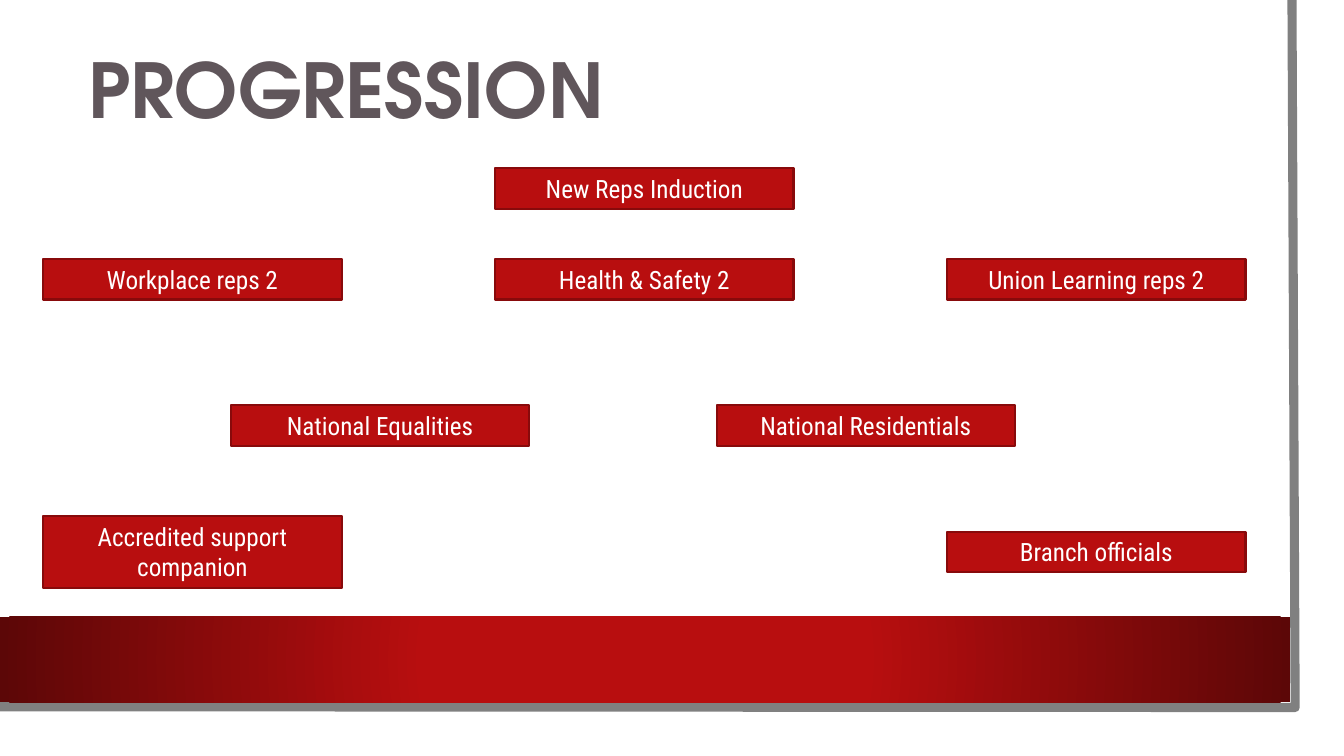
from lxml import etree
from pptx import Presentation
from pptx.dml.color import RGBColor
from pptx.enum.shapes import MSO_SHAPE
from pptx.enum.text import MSO_ANCHOR, MSO_AUTO_SIZE, PP_ALIGN
from pptx.oxml import parse_xml
from pptx.oxml.ns import nsdecls, qn
from pptx.util import Cm, Pt

# Content: column, row, lines of text, label
TITLE = "PROGRESSION"
COURSES = [
    ("centre", "induction", 1, "New Reps Induction"),
    ("right", "stage two", 1, "Union Learning reps 2"),
    ("centre", "stage two", 1, "Health & Safety 2"),
    ("left", "stage two", 1, "Workplace reps 2"),
    ("inner left", "national", 1, "National Equalities"),
    ("inner right", "national", 1, "National Residentials"),
    ("right", "roles", 1, "Branch officials"),
    ("left", "roles", 2, "Accredited support companion"),
]

RED = RGBColor(0xB8, 0x0E, 0x0F)
DARK_RED = RGBColor(0x5C, 0x07, 0x07)
OUTLINE_RED = RGBColor(0x88, 0x0A, 0x0B)
TITLE_GREY = RGBColor(0x60, 0x56, 0x5B)
FRAME_GREY = RGBColor(0x80, 0x80, 0x80)
WHITE = RGBColor(0xFF, 0xFF, 0xFF)

# Layout in centimetres: left edges of columns, centre lines of rows
COLUMN_STEP = 11.39
COLUMNS = {
    "left": 1.09,
    "centre": 1.09 + COLUMN_STEP,
    "right": 1.09 + 2 * COLUMN_STEP,
    "inner left": 5.82,
    "inner right": 18.06,
}
ROWS = {"induction": 4.75, "stage two": 7.04, "national": 10.72, "roles": 13.91}
BOX_WIDTH = 7.52
BOX_HEIGHT = 1.02
LINE_HEIGHT = 0.78


def add_rectangle(slide, left, top, width, height):
    shape = slide.shapes.add_shape(
        MSO_SHAPE.RECTANGLE, Cm(left), Cm(top), Cm(width), Cm(height))
    shape.shadow.inherit = False
    return shape


def add_run(paragraph, text, font_name, size, color, bold=False):
    run = paragraph.add_run()
    run.text = text
    run.font.name = font_name
    run.font.size = Pt(size)
    run.font.bold = bold
    run.font.color.rgb = color


def add_frame(slide):
    builder = slide.shapes.build_freeform(Cm(32.56), Cm(0))
    builder.add_line_segments([(Cm(32.64), Cm(17.83)), (Cm(0), Cm(17.81))], close=False)
    frame = builder.convert_to_shape()
    frame.shadow.inherit = False
    frame.fill.background()
    frame.line.color.rgb = FRAME_GREY
    frame.line.width = Pt(6.5)


def add_band(slide):
    band = add_rectangle(slide, 0, 15.54, 32.51, 2.16)
    band.line.fill.background()
    band.fill.gradient()
    gradient = band.element.spPr.find(qn("a:gradFill"))
    radial = parse_xml(
        f'<a:gradFill {nsdecls("a")} rotWithShape="1"><a:gsLst/><a:path path="circle">'
        '<a:fillToRect l="50000" t="50000" r="50000" b="50000"/></a:path></a:gradFill>')
    for position, color in ((34, RED), (100, DARK_RED)):
        stop = etree.SubElement(radial[0], qn("a:gs"), pos=str(position * 1000))
        etree.SubElement(stop, qn("a:srgbClr"), val=str(color))
    gradient.getparent().replace(gradient, radial)


def add_title(slide):
    title = slide.shapes.title
    title.left, title.top, title.width, title.height = Cm(1.98), Cm(0.76), Cm(28.88), Cm(3.2)
    frame = title.text_frame
    frame.auto_size = MSO_AUTO_SIZE.NONE
    frame.vertical_anchor = MSO_ANCHOR.MIDDLE
    paragraph = frame.paragraphs[0]
    paragraph.alignment = PP_ALIGN.LEFT
    paragraph.line_spacing = 0.9
    add_run(paragraph, TITLE, "TeX Gyre Adventor", 54, TITLE_GREY, bold=True)


def add_course(slide, column, row, lines, label):
    height = BOX_HEIGHT + (lines - 1) * LINE_HEIGHT
    box = add_rectangle(slide, COLUMNS[column], ROWS[row] - height / 2, BOX_WIDTH, height)
    box.fill.solid()
    box.fill.fore_color.rgb = RED
    box.line.color.rgb = OUTLINE_RED
    box.line.width = Pt(1.5)
    frame = box.text_frame
    frame.word_wrap = True
    frame.auto_size = MSO_AUTO_SIZE.SHAPE_TO_FIT_TEXT
    frame.vertical_anchor = MSO_ANCHOR.TOP
    paragraph = frame.paragraphs[0]
    paragraph.alignment = PP_ALIGN.CENTER
    add_run(paragraph, label, "Roboto Condensed", 18, WHITE)


def main():
    presentation = Presentation()
    presentation.slide_width = Cm(33.87)
    presentation.slide_height = Cm(19.05)
    slide = presentation.slides.add_slide(presentation.slide_layouts[5])

    # Frame, band and title
    add_frame(slide)
    add_band(slide)
    add_title(slide)

    # Course boxes
    for course in COURSES:
        add_course(slide, *course)

    presentation.save("out.pptx")


if __name__ == "__main__":
    main()
